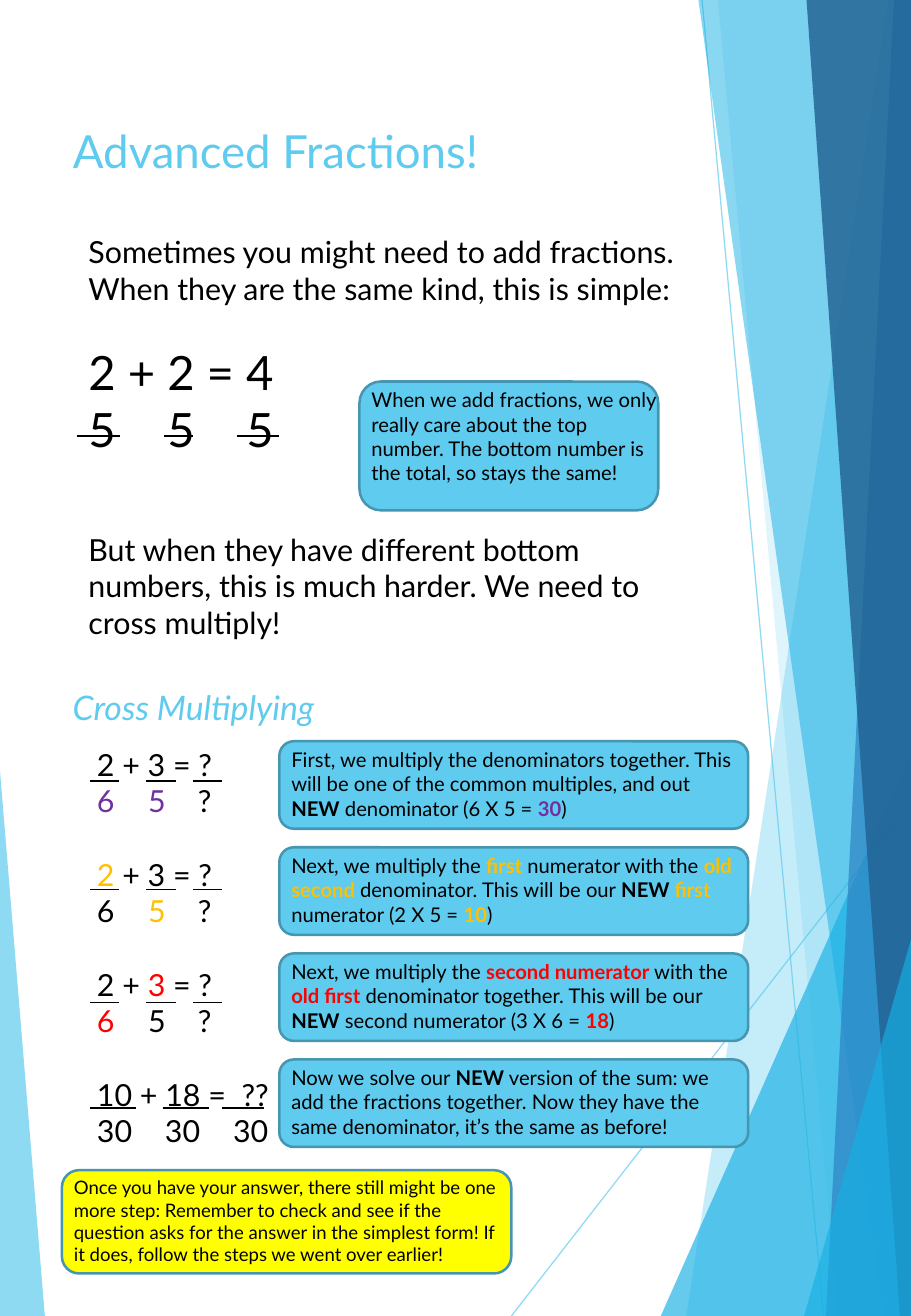
from collections import namedtuple

from lxml import etree
from pptx import Presentation
from pptx.dml.color import RGBColor
from pptx.enum.shapes import MSO_CONNECTOR, MSO_SHAPE
from pptx.enum.text import MSO_ANCHOR, PP_ALIGN
from pptx.oxml.ns import qn
from pptx.util import Inches, Pt

STRAIGHT = MSO_CONNECTOR.STRAIGHT
ROUNDED = MSO_SHAPE.ROUNDED_RECTANGLE
TOP = MSO_ANCHOR.TOP
LEFT = PP_ALIGN.LEFT

BLACK = RGBColor(0x00, 0x00, 0x00)
SKY = RGBColor(0x5F, 0xCB, 0xEF)
CYAN = RGBColor(0x17, 0xB0, 0xE4)
BLUE = RGBColor(0x2E, 0x83, 0xC3)
NAVY = RGBColor(0x22, 0x62, 0x92)
EDGE = RGBColor(0x46, 0x96, 0xB1)
YELLOW = RGBColor(0xFF, 0xFF, 0x00)
PURPLE = RGBColor(0x70, 0x30, 0xA0)
GOLD = RGBColor(0xFF, 0xC0, 0x00)
RED = RGBColor(0xFF, 0x00, 0x00)

FONT = "Lato"
WIDTH, HEIGHT = 7.5, 10.83
BLANK_LINE = 22
STEP_PITCH = 0.873

Box = namedtuple("Box", "left top width height")

FACETS = [
    (SKY, 70, [(0, 6.34), (0.37, HEIGHT), (0, HEIGHT)]),
    (SKY, 36, [(7.31, 0), (5.65, HEIGHT), (WIDTH, HEIGHT), (WIDTH, 0)]),
    (SKY, 20, [(5.91, 0), (6.9, HEIGHT), (WIDTH, HEIGHT), (WIDTH, 0)]),
    (CYAN, 66, [(5.44, HEIGHT), (WIDTH, 6.19), (WIDTH, HEIGHT)]),
    (CYAN, 50, [(5.75, 0), (7.27, HEIGHT), (WIDTH, HEIGHT), (WIDTH, 0)]),
    (BLUE, 70, [(7.36, 0), (6.8, HEIGHT), (WIDTH, HEIGHT), (WIDTH, 0)]),
    (NAVY, 82, [(6.64, 0), (7.41, HEIGHT), (WIDTH, HEIGHT), (WIDTH, 0)]),
    (CYAN, 66, [(6.62, HEIGHT), (WIDTH, 7.73), (WIDTH, HEIGHT)]),
]

STEP_NOTES = [
    [("First, we multiply the denominators together. This will be one of the "
      "common multiples, and out ",), ("NEW", BLACK, True),
     (" denominator (6 X 5 = ",), ("30", PURPLE, True), (")",)],
    [("Next, we multiply the ",), ("first", GOLD, True),
     (" numerator with the ",), ("old second ", GOLD, True),
     ("denominator. This will be our ",), ("NEW ", BLACK, True),
     ("first", GOLD, True), (" numerator (2 X 5 = ",),
     ("10", GOLD, True), (")",)],
    [("Next, we multiply the ",), ("second numerator ", RED, True),
     ("with the ",), ("old first", RED, True),
     (" denominator together. This will be our ",), ("NEW", BLACK, True),
     (" second numerator (3 X 6 = ",), ("18", RED, True), (")",)],
    [("Now we solve our ",), ("NEW ", BLACK, True),
     ("version of the sum: we add the fractions together. Now they have the "
      "same denominator, it’s the same as before!",)],
]

STEP_SUMS = [
    ([("2 + 3 = ?",)], [("6", PURPLE), ("\t5", PURPLE), ("\t?",)]),
    ([("2", GOLD), (" + 3 = ?",)], [("6",), ("\t5", GOLD), ("\t?",)]),
    ([("2 + ",), ("3", RED), (" = ?",)], [("6", RED), ("\t5",), ("\t?",)]),
    ([("10 + 18 =\t??",)], [("30\t30\t30",)]),
]

NARROW_BARS = [(0.04, 0.28), (0.5, 0.75), (0.89, 1.13)]
WIDE_BARS = [(0.04, 0.42), (0.64, 1.02), (1.13, 1.47)]
STEP_BARS = [(0.34, NARROW_BARS), (1.23, NARROW_BARS),
             (2.16, NARROW_BARS), (3.03, WIDE_BARS)]


def write(para, text, size=18, color=BLACK, bold=False, italic=False):
    span = para.add_run()
    span.text = text
    span.font.name = FONT
    span.font.size = Pt(size)
    span.font.color.rgb = color
    span.font.bold = bold
    span.font.italic = italic


def write_spans(para, spans, size):
    for text, *look in spans:
        color, bold = (look + [BLACK, False][len(look):])
        write(para, text, size=size, color=color, bold=bold)


def set_tabs(para, stops):
    tabs = etree.SubElement(para._p.get_or_add_pPr(), qn("a:tabLst"))
    for stop in stops:
        etree.SubElement(tabs, qn("a:tab"), pos=str(Inches(stop)), algn="l")


def set_opacity(fill_parent, percent):
    color = fill_parent.find(".//" + qn("a:srgbClr"))
    etree.SubElement(color, qn("a:alpha"), val=str(percent * 1000))


def add_text(page, box):
    frame = page.shapes.add_textbox(*map(Inches, box)).text_frame
    frame.word_wrap = True
    frame.vertical_anchor = TOP
    return frame


def add_rule(page, start, end, color=BLACK, weight=1):
    rule = page.shapes.add_connector(STRAIGHT, *map(Inches, start + end))
    rule.line.color.rgb = color
    rule.line.width = Pt(weight)
    etree.SubElement(rule._element.spPr, qn("a:effectLst"))
    return rule


def add_bars(page, box, offset, bars):
    y = box.top + offset
    for start, end in bars:
        add_rule(page, (box.left + start, y), (box.left + end, y))


def add_callout(page, box, spans, size=12, fill=SKY, text_extra=0):
    panel = page.shapes.add_shape(ROUNDED, *map(Inches, box))
    panel.shadow.inherit = False
    panel.fill.solid()
    panel.fill.fore_color.rgb = fill
    panel.line.color.rgb = EDGE
    panel.line.width = Pt(1.5)
    frame = add_text(page, box._replace(width=box.width + text_extra))
    write_spans(frame.paragraphs[0], spans, size)


def add_backdrop(page):
    for start, end in [((4.21, HEIGHT), (WIDTH, 6.6)), ((5.78, 0), (6.78, HEIGHT))]:
        rule = add_rule(page, start, end, color=SKY, weight=0.75)
        set_opacity(rule._element.spPr, 70)
    for color, opacity, corners in FACETS:
        points = [(Inches(x), Inches(y)) for x, y in corners]
        builder = page.shapes.build_freeform(*points[0])
        builder.add_line_segments(points[1:], close=True)
        facet = builder.convert_to_shape()
        facet.shadow.inherit = False
        facet.fill.solid()
        facet.fill.fore_color.rgb = color
        facet.line.fill.background()
        set_opacity(facet._element.spPr, opacity)


def add_title(page, box):
    title = page.shapes.title
    title.left, title.top, title.width, title.height = map(Inches, box)
    title.text_frame.word_wrap = True
    title.text_frame.vertical_anchor = TOP
    para = title.text_frame.paragraphs[0]
    para.alignment = LEFT
    write(para, "Advanced Fractions!", size=27, color=SKY)


def add_introduction(page, box):
    frame = add_text(page, box)
    write(frame.paragraphs[0], "Sometimes you might need to add fractions. "
          "When they are the same kind, this is simple:")
    numerators = frame.add_paragraph()
    numerators.space_before = Pt(BLANK_LINE)
    write(numerators, "2 + 2 = 4", size=28)
    denominators = frame.add_paragraph()
    set_tabs(denominators, (0.65, 1.3))
    write(denominators, "5\t5\t5", size=28)
    closing = frame.add_paragraph()
    closing.space_before = Pt(2 * BLANK_LINE)
    write(closing, "But when they have different bottom numbers, this is much "
          "harder. We need to cross multiply!")
    add_bars(page, box, 1.72, [(0, 0.36), (0.72, 0.96), (1.32, 1.67)])


def add_step_sums(page, box):
    frame = add_text(page, box)
    for index, (top_spans, bottom_spans) in enumerate(STEP_SUMS):
        last = index == len(STEP_SUMS) - 1
        numerators = frame.add_paragraph() if index else frame.paragraphs[0]
        numerators.space_before = Pt(BLANK_LINE if index else 0)
        denominators = frame.add_paragraph()
        if last:
            set_tabs(numerators, (1.19,))
        set_tabs(denominators, (0.56, 1.12) if last else (0.42, 0.83))
        write_spans(numerators, top_spans, 18)
        write_spans(denominators, bottom_spans, 18)
    for offset, bars in STEP_BARS:
        add_bars(page, box, offset, bars)


def add_step_notes(page, box):
    for index, spans in enumerate(STEP_NOTES):
        add_callout(page, box._replace(top=box.top + index * STEP_PITCH), spans)


def main():
    deck = Presentation()
    deck.slide_width, deck.slide_height = Inches(WIDTH), Inches(HEIGHT)
    page = deck.slides.add_slide(deck.slide_layouts[5])
    add_backdrop(page)
    add_title(page, Box(0.5, 0.96, 5.21, 2.09))
    add_introduction(page, Box(0.63, 1.87, 5.07, 3.77))
    add_callout(page, Box(2.96, 3.14, 2.46, 1.06), [
        ("When we add fractions, we only really care about the top number. "
         "The bottom number is the total, so stays the same!",)], text_extra=0.1)
    heading = add_text(page, Box(0.5, 5.6, 5.21, 0.45))
    write(heading.paragraphs[0], "Cross Multiplying", size=20, color=SKY, italic=True)
    add_step_sums(page, Box(0.7, 6.09, 2.49, 3.74))
    add_step_notes(page, Box(2.3, 6.1, 3.86, 0.72))
    add_callout(page, Box(0.51, 9.63, 3.7, 0.85), [
        ("Once you have your answer, there still might be one more step: Remember "
         "to check and see if the question asks for the answer in the simplest "
         "form! If it does, follow the steps we went over earlier!",)],
        size=11, fill=YELLOW)
    deck.save("out.pptx")


if __name__ == "__main__":
    main()
